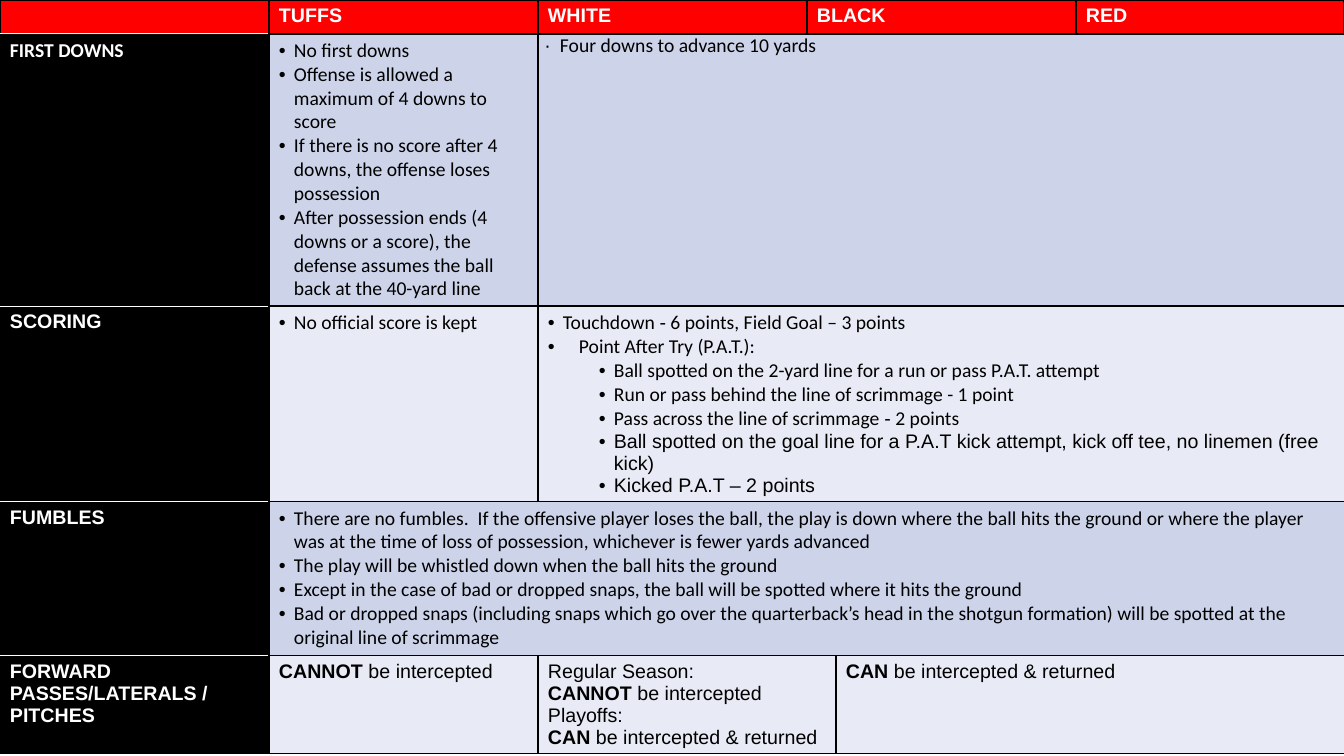
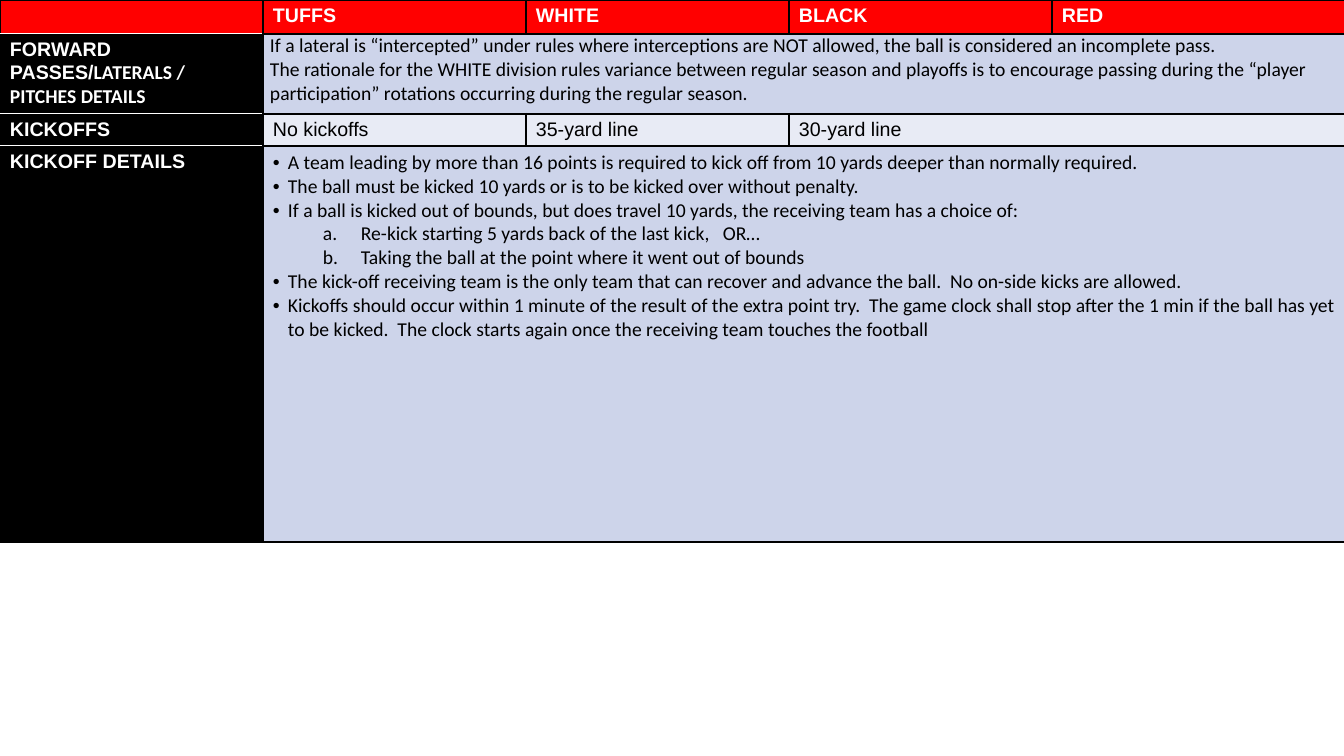
from dataclasses import dataclass

from lxml import etree
from pptx import Presentation
from pptx import util as u
from pptx.dml.color import RGBColor
from pptx.oxml import ns

SLIDE_WIDTH, SLIDE_HEIGHT = 1344, 756
EMU_PER_PX = 12192000 / SLIDE_WIDTH
TEXT_SIZE = 14
COLOURS = {
    "header": "FF0000",
    "label": "000000",
    "odd": "CDD4EA",
    "even": "E8EBF5",
    "ink": "000000",
    "light": "FFFFFF",
}
DIVISIONS = ("TUFFS", "WHITE", "BLACK", "RED")
MARGINS = {"margin_left": 10, "margin_right": 10, "margin_top": 5, "margin_bottom": 5}
TIGHT_MARGINS = {"margin_left": 7, "margin_right": 7, "margin_top": 0, "margin_bottom": 0}


@dataclass(frozen=True)
class Span:
    text: str
    font: str = "Calibri"
    bold: bool = False


@dataclass(frozen=True)
class Marker:
    indent: int
    hanging: int
    level: int = 0
    symbol: str = "•"
    numbering: str = ""


@dataclass(frozen=True)
class Para:
    spans: tuple[Span, ...]
    marker: Marker | None = None


@dataclass(frozen=True)
class Cell:
    paras: tuple[Para, ...]
    columns: int = 1
    tight: bool = False


@dataclass(frozen=True)
class Row:
    height: int
    label: Para
    cells: tuple[Cell, ...]
    rule: float = 1.5


@dataclass(frozen=True)
class Sheet:
    columns: tuple[int, ...]
    header_spans: tuple[int, ...]
    edge: float
    rows: tuple[Row, ...]


@dataclass(frozen=True)
class Line:
    width: float
    colour: str = "ink"


BULLET = Marker(15, 15)
DOT = Marker(15, 15, symbol="∙")
WIDE_BULLET = Marker(31, 31)
SUB_BULLET = Marker(66, 15, level=1)
LETTER = Marker(88, 38, level=1, numbering="alphaLcPeriod")


def px(length: int) -> u.Emu:
    return u.Emu(round(length * EMU_PER_PX))


def arial(words: str, marker: Marker | None = None) -> Para:
    return Para((Span(words, "Arial"),), marker)


def heading(words: str, font: str = "Arial") -> Para:
    return Para((Span(words, font, True),))


def verdict(word: str, rest: str) -> Para:
    return Para((Span(word, "Arial", True), Span(rest, "Arial")))


def listed(*items: str, marker: Marker | None = BULLET) -> tuple[Para, ...]:
    return tuple(Para((Span(item),), marker) for item in items)


def arial_dash(before: str, after: str, marker: Marker) -> Para:
    return Para((Span(before), Span("-", "Arial"), Span(after)), marker)


def add_child(parent, tag: str, **attributes: str):
    return etree.SubElement(parent, ns.qn(tag), attributes)


def mark(paragraph, marker: Marker) -> None:
    """Give a paragraph its bullet or number and hanging indent."""
    paragraph.level = marker.level
    properties = paragraph._p.get_or_add_pPr()
    properties.set("marL", str(px(marker.indent)))
    properties.set("indent", str(-px(marker.hanging)))
    add_child(add_child(properties, "a:buClr"), "a:srgbClr", val=COLOURS["ink"])
    if marker.numbering:
        add_child(properties, "a:buAutoNum", type=marker.numbering)
    else:
        add_child(properties, "a:buFont", typeface="Arial")
        add_child(properties, "a:buChar", char=marker.symbol)


def write(cell, paras: tuple[Para, ...], ink: str) -> None:
    frame = cell.text_frame
    for index, para in enumerate(paras):
        paragraph = frame.add_paragraph() if index else frame.paragraphs[0]
        if para.marker:
            mark(paragraph, para.marker)
        for span in para.spans:
            run = paragraph.add_run()
            run.text = span.text
            values = {"name": span.font, "size": u.Pt(TEXT_SIZE), "bold": span.bold}
            for name, value in values.items():
                setattr(run.font, name, value)
            run.font.color.rgb = RGBColor.from_string(COLOURS[ink])
    for paragraph in frame.paragraphs:
        add_child(paragraph._p, "a:endParaRPr", sz=str(TEXT_SIZE * 100))


def set_borders(cell, borders: dict[str, Line | None]) -> None:
    properties = cell._tc.get_or_add_tcPr()
    for side in "LRTB":
        line = borders[side]
        if line is None:
            add_child(add_child(properties, f"a:ln{side}", w="0"), "a:noFill")
            continue
        border = add_child(properties, f"a:ln{side}", w=str(u.Pt(line.width)))
        fill = add_child(border, "a:solidFill")
        add_child(fill, "a:srgbClr", val=COLOURS[line.colour])


def draw_cell(table, row: int, column: int, content: Cell, fill: str, ink: str,
              borders: dict[str, Line]) -> None:
    """Fill one cell, joined over its columns, with lines on the outside only."""
    last = column + content.columns - 1
    for position in range(column, last + 1):
        cell = table.cell(row, position)
        for name, value in (TIGHT_MARGINS if content.tight else MARGINS).items():
            setattr(cell, name, px(value))
        set_borders(cell, borders | {
            "L": borders["L"] if position == column else None,
            "R": borders["R"] if position == last else None,
        })
        cell.fill.solid()
        cell.fill.fore_color.rgb = RGBColor.from_string(COLOURS[fill])
        write(cell, content.paras if position == column else (), ink)
    if content.columns > 1:
        table.cell(row, column).merge(table.cell(row, last))


def draw_sheet(deck, sheet: Sheet) -> None:
    page = deck.slides.add_slide(deck.slide_layouts[6])
    header = Row(33, Para(()), tuple(
        Cell((heading(name),), count)
        for name, count in zip(DIVISIONS, sheet.header_spans)))
    rows = (header, *sheet.rows)
    table = page.shapes.add_table(
        len(rows), len(sheet.columns), 0, 0,
        px(sum(sheet.columns)), px(sum(row.height for row in rows))).table
    table.first_row = table.horz_banding = False
    for index, width in enumerate(sheet.columns):
        table.columns[index].width = px(width)

    edge, white = Line(sheet.edge), Line(1, "light")
    for index, row in enumerate(rows):
        table.rows[index].height = px(row.height)
        is_last = index == len(rows) - 1
        rule = Line(row.rule)
        top = rule if index else edge
        bottom = edge if is_last else Line(rows[index + 1].rule)
        draw_cell(table, index, 0, Cell((row.label,)),
                  "label" if index else "header", "light",
                  {"L": edge, "T": white if index else edge,
                   "R": Line(1.5), "B": edge if is_last else white})
        fill = ("even", "odd")[index % 2] if index else "header"
        column, left = 1, Line(1.5)
        for content in row.cells:
            following = column + content.columns
            right = edge if following == len(sheet.columns) else rule
            draw_cell(table, index, column, content, fill,
                      "ink" if index else "light",
                      {"L": left, "T": top, "R": right, "B": bottom})
            column, left = following, right


SCORING = (
    arial_dash("Touchdown ", " 6 points, Field Goal – 3 points", BULLET),
    *listed("Point After Try (P.A.T.):", marker=WIDE_BULLET),
    *listed("Ball spotted on the 2-yard line for a run or pass P.A.T. attempt",
            "Run or pass behind the line of scrimmage - 1 point", marker=SUB_BULLET),
    arial_dash("Pass across the line of scrimmage ", " 2 points", SUB_BULLET),
    arial("Ball spotted on the goal line for a P.A.T kick attempt, kick off tee, "
          "no linemen (free kick)", SUB_BULLET),
    arial("Kicked P.A.T – 2 points", SUB_BULLET),
)
CANNOT = verdict("CANNOT", " be intercepted")
CAN = verdict("CAN", " be intercepted & returned")

PLAY_RULES = Sheet((269, 269, 269, 29, 240, 268), (1, 1, 2, 1), 1, (
    Row(272, heading("FIRST DOWNS", "Calibri"), (
        Cell(listed(
            "No first downs",
            "Offense is allowed a maximum of 4 downs to score",
            "If there is no score after 4 downs, the offense loses possession",
            "After possession ends (4 downs or a score), the defense assumes the ball "
            "back at the 40-yard line")),
        Cell(listed("Four downs to advance 10 yards", marker=DOT), 4, tight=True))),
    Row(195, heading("SCORING"), (
        Cell(listed("No official score is kept")), Cell(SCORING, 4))),
    Row(154, heading("FUMBLES"), (
        Cell(listed(
            "There are no fumbles.  If the offensive player loses the ball, the play is "
            "down where the ball hits the ground or where the player was at the time of "
            "loss of possession, whichever is fewer yards advanced",
            "The play will be whistled down when the ball hits the ground",
            "Except in the case of bad or dropped snaps, the ball will be spotted where "
            "it hits the ground",
            "Bad or dropped snaps (including snaps which go over the quarterback’s head "
            "in the shotgun formation) will be spotted at the original line of "
            "scrimmage"), 5),)),
    Row(98, heading("FORWARD PASSES/LATERALS / PITCHES"), (
        Cell((CANNOT,)),
        Cell((arial("Regular Season:"), CANNOT, arial("Playoffs:"), CAN), 2),
        Cell((CAN,), 2)), rule=1),
))

KICKOFF_RULES = Sheet((263, 263, 263, 263, 297), (1, 1, 1, 1), 1.5, (
    Row(80, Para((Span("FORWARD PASSES/", "Arial", True),
                  Span("LATERALS / PITCHES DETAILS", bold=True))), (
        Cell(listed(
            "If a lateral is “intercepted” under rules where interceptions are NOT "
            "allowed, the ball is considered an incomplete pass.",
            "The rationale for the WHITE division rules variance between regular season "
            "and playoffs is to encourage passing during the “player participation” "
            "rotations occurring during the regular season.", marker=None),
            4, tight=True),)),
    Row(32, heading("KICKOFFS"), (
        Cell((arial("No kickoffs"),)),
        Cell((arial("35-yard line"),)),
        Cell((arial("30-yard line"),), 2))),
    Row(396, heading("KICKOFF DETAILS"), (
        Cell((
            *listed(
                "A team leading by more than 16 points is required to kick off from 10 "
                "yards deeper than normally required.",
                "The ball must be kicked 10 yards or is to be kicked over without "
                "penalty.",
                "If a ball is kicked out of bounds, but does travel 10 yards, the "
                "receiving team has a choice of:"),
            *listed("Re-kick starting 5 yards back of the last kick,   OR…",
                    "Taking the ball at the point where it went out of bounds",
                    marker=LETTER),
            *listed(
                "The kick-off receiving team is the only team that can recover and "
                "advance the ball.  No on-side kicks are allowed.",
                "Kickoffs should occur within 1 minute of the result of the extra point "
                "try.  The game clock shall stop after the 1 min if the ball has yet to "
                "be kicked.  The clock starts again once the receiving team touches the "
                "football")), 4),)),
))


def main() -> None:
    deck = Presentation()
    deck.slide_width, deck.slide_height = px(SLIDE_WIDTH), px(SLIDE_HEIGHT)
    for sheet in (PLAY_RULES, KICKOFF_RULES):
        draw_sheet(deck, sheet)
    deck.save("out.pptx")


if __name__ == "__main__":
    main()
